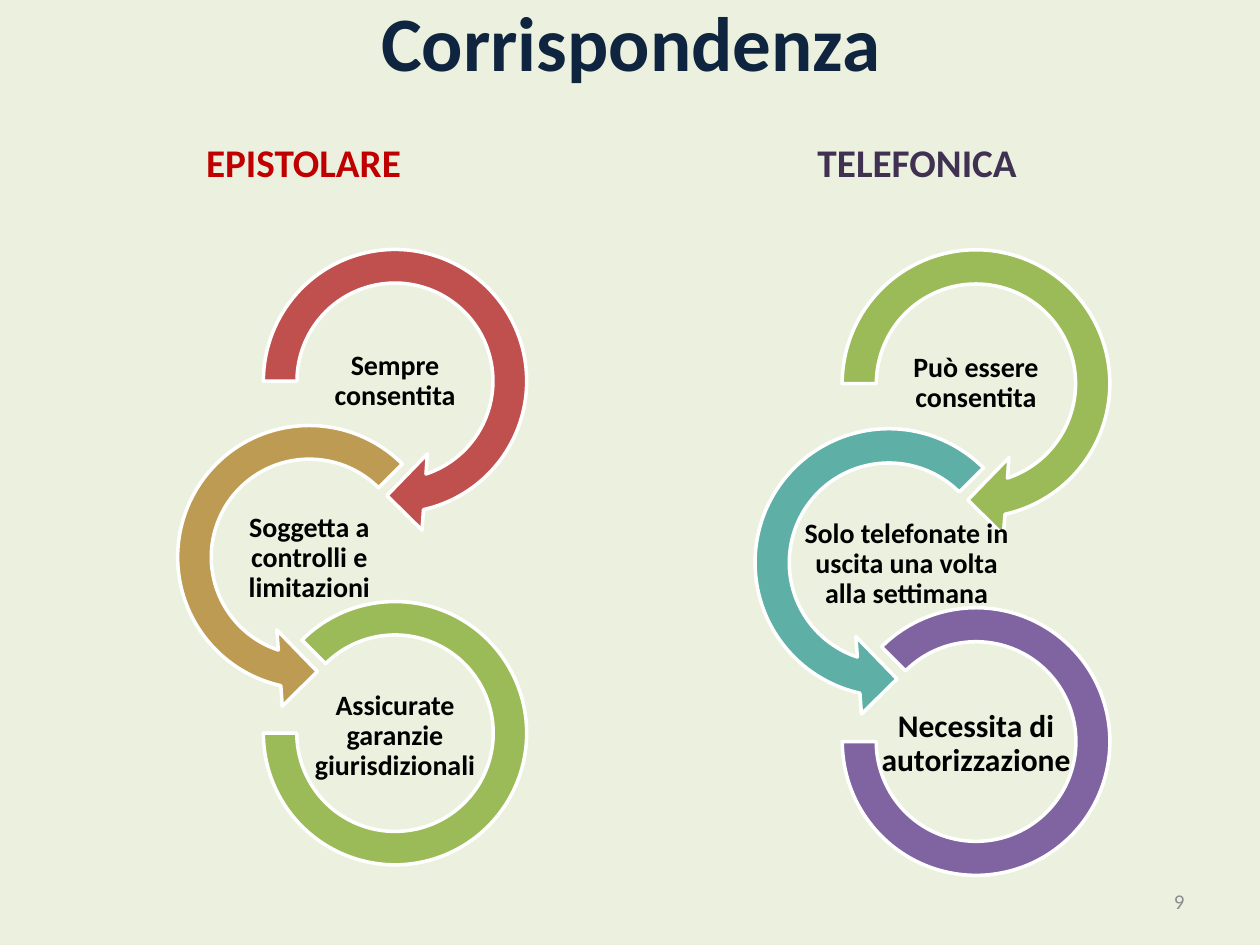
import pptx
import pptx.util
import pptx.dml.color
import pptx.enum.shapes
import pptx.enum.text

SHAPE = pptx.enum.shapes.MSO_SHAPE
ALIGN = pptx.enum.text.PP_ALIGN
ANCHOR = pptx.enum.text.MSO_ANCHOR
Inches = pptx.util.Inches

TITLE = "Corrispondenza"
PAGE = "9"
TOP = 1.81
COLUMNS = [
    {"heading": "epistolare", "color": "C00000", "box": (1.3, 0.84, 2.22, 0.7),
     "left": 1.24, "ring": 2.43,
     "steps": [("Sempre consentita", "C0504D", 1.35, 16, 0),
               ("Soggetta a controlli e limitazioni", "BD9B53", 1.35, 16, 0),
               ("Assicurate garanzie giurisdizionali", "9BBB59", 1.35, 16, 0)]},
    {"heading": "telefonica", "color": "403152", "box": (6.18, 0.84, 2.2, 0.7),
     "left": 5.82, "ring": 2.47,
     "steps": [("Può essere consentita", "9BBB59", 1.37, 16, 0),
               ("Solo telefonate in uscita una volta alla settimana", "5EAFA6", 1.71, 16, 0.14),
               ("Necessita di autorizzazione", "8064A2", 1.75, 18, 0)]},
]
# Ring x, y, size and label centre x, y are shares of the ring size
RINGS = [
    (SHAPE.CIRCULAR_ARROW, (0.11, 11.42, 45, 108, 0.125), (0.28, 0, 1), (0.78, 0.5)),
    (SHAPE.LEFT_CIRCULAR_ARROW, (0.11, 11.42, 63, 189, 0.125), (0, 0.575, 1), (0.5, 1.08)),
    (SHAPE.BLOCK_ARC, (135, 108, 0.127), (0.35, 1.22, 0.86), (0.78, 1.66)),
]
LABEL_HEIGHT = 0.28


def rgb(color):
    return pptx.dml.color.RGBColor.from_string(color)


def add_text(shapes, box, text, size, color, bold=True, align=ALIGN.CENTER,
             anchor=ANCHOR.MIDDLE, inset=None, spacing=None, small_caps=False):
    tf = shapes.add_textbox(*map(Inches, box)).text_frame
    tf.word_wrap = True
    tf.vertical_anchor = anchor
    if inset is not None:
        tf.margin_left = tf.margin_right = tf.margin_top = tf.margin_bottom = Inches(inset)
    p = tf.paragraphs[0]
    p.text = text
    p.alignment = align
    p.line_spacing = spacing
    font = p.runs[0].font
    font.name = "Calibri"
    font.size = pptx.util.Pt(size)
    font.bold = bold
    font.color.rgb = rgb(color)
    if small_caps:
        p.runs[0]._r.get_or_add_rPr().set("cap", "small")


def add_ring(shapes, kind, adjustments, box, color):
    sp = shapes.add_shape(kind, *map(Inches, box))
    sp.shadow.inherit = False
    for i, value in enumerate(adjustments):
        sp.adjustments[i] = value
    sp.fill.solid()
    sp.fill.fore_color.rgb = rgb(color)
    sp.line.color.rgb = rgb("FFFFFF")
    sp.line.width = pptx.util.Pt(2)


def add_column(s, column):
    add_text(s.shapes, column["box"], column["heading"], 28, column["color"],
             anchor=ANCHOR.BOTTOM, small_caps=True)
    left, ring = column["left"], column["ring"]
    shapes = s.shapes.add_group_shape().shapes
    for step, (kind, adjustments, (x, y, size), (cx, cy)) in zip(column["steps"], RINGS):
        text, color, width, points, shift = step
        add_ring(shapes, kind, adjustments,
                 (left + x * ring, TOP + y * ring, size * ring, size * ring), color)
        height = LABEL_HEIGHT * ring
        box = (left + cx * ring + shift - width / 2, TOP + cy * ring - height / 2, width, height)
        add_text(shapes, box, text, points, "000000", inset=0.01, spacing=0.9)


def main():
    prs = pptx.Presentation()
    prs.slide_width, prs.slide_height = Inches(10), Inches(7.5)
    s = prs.slides.add_slide(prs.slide_layouts[6])
    s.background.fill.solid()
    s.background.fill.fore_color.rgb = rgb("EBF1DE")
    add_text(s.shapes, (0.51, -0.11, 9, 0.86), TITLE, 44, "0F243E")
    for column in COLUMNS:
        add_column(s, column)
    add_text(s.shapes, (7.17, 6.95, 2.33, 0.4), PAGE, 12, "8C8C8C", bold=False, align=ALIGN.RIGHT)
    prs.save("out.pptx")


if __name__ == "__main__":
    main()
